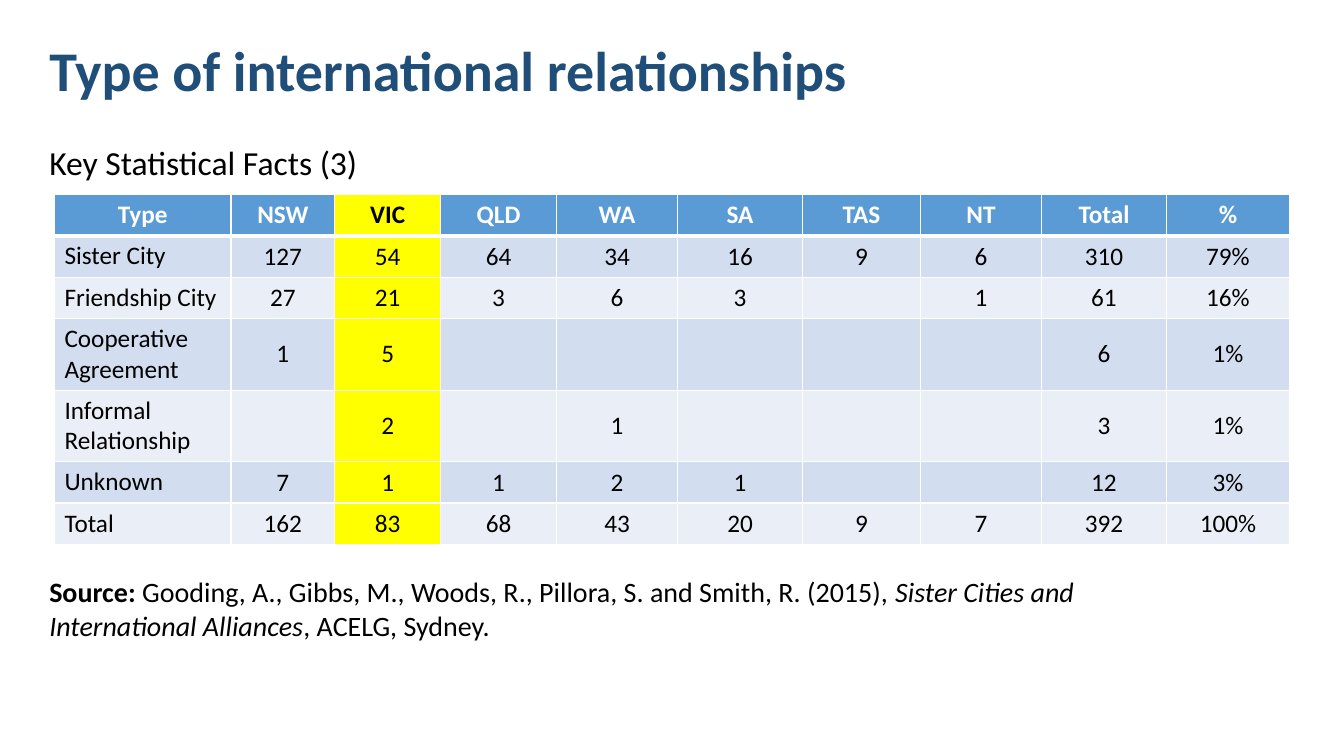
from dataclasses import dataclass

from lxml.etree import SubElement
from pptx import Presentation
from pptx.dml.color import RGBColor
from pptx.enum.text import MSO_ANCHOR, PP_ALIGN
from pptx.oxml.ns import qn
from pptx.util import Inches, Pt


@dataclass(frozen=True)
class Theme:
    """Colours, font and type sizes of the slide."""
    font: str = "Calibri"
    black: str = "000000"
    white: str = "FFFFFF"
    navy: str = "1F4E79"
    header: str = "5B9BD5"
    highlight: str = "FFFF00"
    bands: tuple = ("EAEFF7", "D2DEEF")
    title_size: int = 40
    subtitle_size: int = 24
    source_size: int = 20
    table_size: int = 18


THEME = Theme()
HIGHLIGHT_COLUMN = 2
ROW_HEIGHT = 0.41
COLUMN_WIDTHS = (1.75, 1.03, 1.05, 1.15, 1.2, 1.24, 1.17, 1.2, 1.24, 1.22)
RELATIONSHIPS = (
    ("Type", "NSW", "VIC", "QLD", "WA", "SA", "TAS", "NT", "Total", "%"),
    ("Sister City", "127", "54", "64", "34", "16", "9", "6", "310", "79%"),
    ("Friendship City", "27", "21", "3", "6", "3", "", "1", "61", "16%"),
    ("Cooperative Agreement", "1", "5", "", "", "", "", "", "6", "1%"),
    ("Informal Relationship", "", "2", "", "1", "", "", "", "3", "1%"),
    ("Unknown", "7", "1", "1", "2", "1", "", "", "12", "3%"),
    ("Total", "162", "83", "68", "43", "20", "9", "7", "392", "100%"),
)


def style_font(font, size, color, bold=False):
    """Set typeface, size, colour and weight."""
    font.name = THEME.font
    font.size = Pt(size)
    font.bold = bold
    font.color.rgb = RGBColor.from_string(color)


def add_text(page, left, top, width, height, spans, size, color, bold=None):
    """Add a text box from (text, bold, italic) spans."""
    box = page.shapes.add_textbox(*map(Inches, (left, top, width, height)))
    box.text_frame.word_wrap = True
    para = box.text_frame.paragraphs[0]
    style_font(para.font, size, color, bold)
    for text, span_bold, italic in spans:
        span = para.add_run()
        span.text = text
        span.font.bold = span_bold
        span.font.italic = italic


def set_borders(cell, top, bottom):
    """Draw white cell borders with the given top and bottom widths."""
    properties = cell._tc.get_or_add_tcPr()
    widths = (("a:lnL", 1), ("a:lnR", 1), ("a:lnT", top), ("a:lnB", bottom))
    for index, (tag, width) in enumerate(widths):
        line = SubElement(properties, qn(tag), w=str(Pt(width)))
        fill = SubElement(line, qn("a:solidFill"))
        SubElement(fill, qn("a:srgbClr"), val=THEME.white)
        properties.insert(index, line)


def fill_cell(cell, text, row, column):
    """Write and style one cell according to its row and column."""
    is_header = row == 0
    is_highlight = column == HIGHLIGHT_COLUMN
    fill_color = THEME.header if is_header else THEME.bands[row % 2]
    cell.fill.solid()
    cell.fill.fore_color.rgb = RGBColor.from_string(
        THEME.highlight if is_highlight else fill_color)
    set_borders(cell, 3 if row == 1 else 1, 3 if is_header else 1)
    cell.text = text
    para = cell.text_frame.paragraphs[0]
    color = THEME.white if is_header and not is_highlight else THEME.black
    style_font(para.font, THEME.table_size, color, is_header)
    if is_header or column > 0:
        cell.vertical_anchor = MSO_ANCHOR.MIDDLE
        para.alignment = PP_ALIGN.CENTER


def add_relationship_table(page, left, top):
    """Add the table of relationship types by state."""
    row_count, column_count = len(RELATIONSHIPS), len(COLUMN_WIDTHS)
    table = page.shapes.add_table(
        row_count, column_count, Inches(left), Inches(top),
        Inches(sum(COLUMN_WIDTHS)), Inches(ROW_HEIGHT * row_count)).table
    for column, width in zip(table.columns, COLUMN_WIDTHS):
        column.width = Inches(width)
    for row, values in enumerate(RELATIONSHIPS):
        for column, text in enumerate(values):
            fill_cell(table.cell(row, column), text, row, column)


def main():
    """Build and save the slide."""
    deck = Presentation()
    deck.slide_width, deck.slide_height = Inches(13.33), Inches(7.5)
    page = deck.slides.add_slide(deck.slide_layouts[6])
    add_relationship_table(page, 0.54, 1.93)
    source = (
        ("Source:", True, None),
        (" Gooding, A., Gibbs, M., Woods, R., Pillora, S. and Smith, R. (2015), ", None, None),
        ("Sister Cities and International Alliances", None, True),
        (", ACELG, Sydney.", None, None),
    )
    add_text(page, 0.39, 5.65, 10.95, 0.77, source, THEME.source_size, THEME.black)
    add_text(page, 0.39, 0.3, 10.78, 0.77,
             [("Type of international relationships", None, None)],
             THEME.title_size, THEME.navy, True)
    add_text(page, 0.39, 1.36, 3.42, 0.5,
             [("Key Statistical Facts (3)", None, None)],
             THEME.subtitle_size, THEME.black)
    deck.save("out.pptx")


if __name__ == "__main__":
    main()
